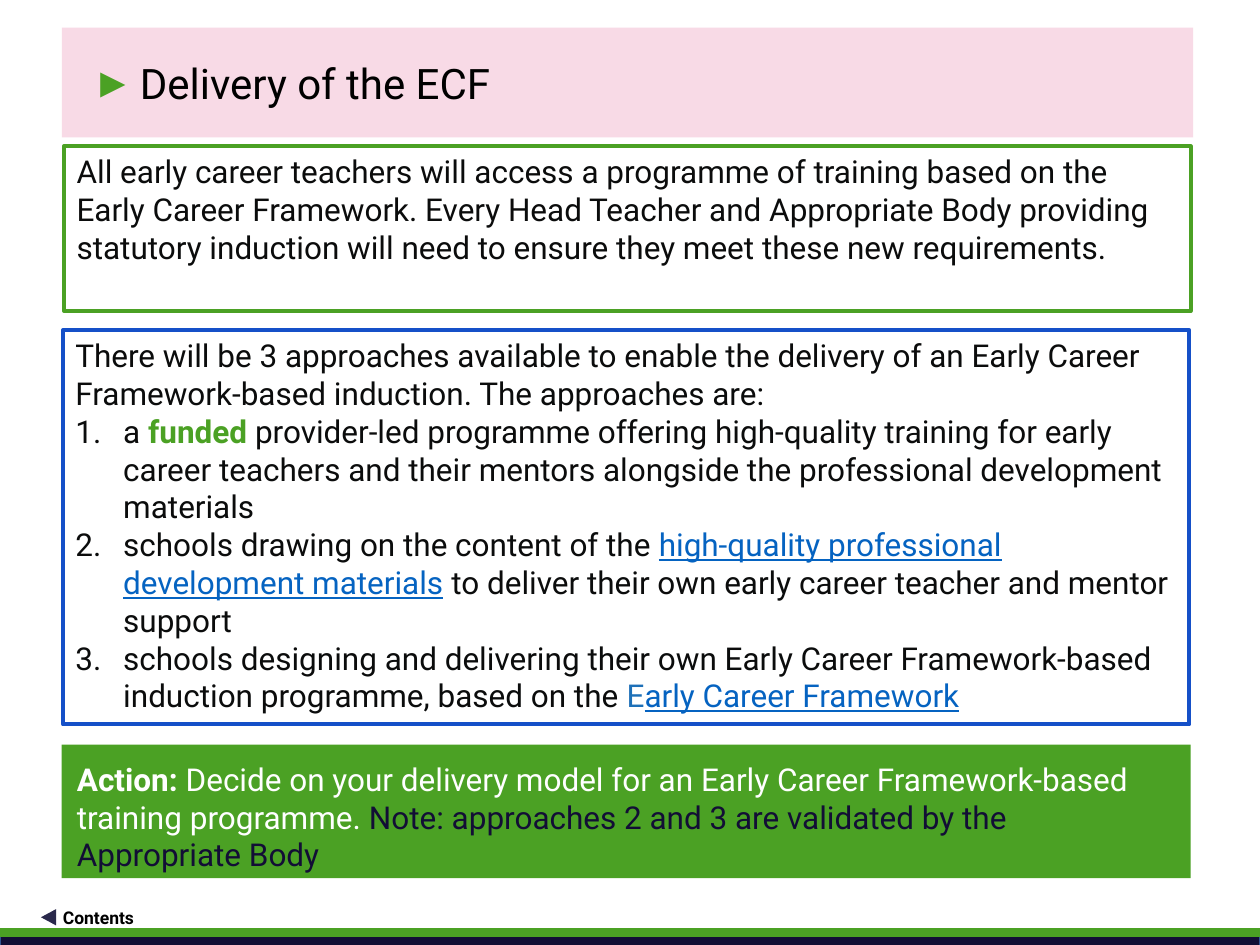
"""Build the slide on delivery of the ECF."""
from lxml.etree import SubElement
from pptx import Presentation
from pptx.dml.color import RGBColor
from pptx.enum.shapes import MSO_SHAPE
from pptx.enum.text import MSO_ANCHOR, PP_ALIGN
from pptx.oxml.ns import qn
from pptx.util import Inches, Pt

GREEN = RGBColor(0x4B, 0xA1, 0x24)
PINK = RGBColor(0xF8, 0xDA, 0xE6)
BLUE = RGBColor(0x15, 0x50, 0xC8)
LINK = RGBColor(0x05, 0x63, 0xC1)
LINK_START = RGBColor(0x1D, 0x70, 0xB8)
NAVY = RGBColor(0x12, 0x0E, 0x35)
ARROW = RGBColor(0x2A, 0x29, 0x4C)
EDGE = RGBColor(0x32, 0x54, 0x91)
INK = RGBColor(0x0B, 0x0C, 0x0C)
BLACK = RGBColor(0, 0, 0)
WHITE = RGBColor(0xFF, 0xFF, 0xFF)

HANGING = 0.38
LINKED = {"color": LINK, "underline": True}

TITLE = [("►", [("Delivery of the ECF", {})])]
INTRO = [(None, [(
    "All early career teachers will access a programme of training based on the "
    "Early Career Framework. Every Head Teacher and Appropriate Body providing "
    "statutory induction will need to ensure they meet these new requirements.", {})])]
APPROACHES = [
    (None, [("There will be 3 approaches available to enable the delivery of an Early "
             "Career Framework-based induction. The approaches are:", {})]),
    ("1.", [("a ", {}),
            ("funded", {"color": GREEN, "bold": True}),
            (" provider-led programme offering high-quality training for early career "
             "teachers and their mentors alongside the professional development "
             "materials", {})]),
    ("1.", [("schools drawing on the content of the ", {}),
            ("high-quality professional development materials", LINKED),
            (" to deliver their own early career teacher and mentor support", {})]),
    ("1.", [("schools designing and delivering their own Early Career Framework-based "
             "induction programme, based on the ", {}),
            ("E", {"color": LINK_START}),
            ("arly Career Framework", LINKED)]),
]
ACTION = [(None, [
    ("Action: ", {"bold": True}),
    ("Decide on your delivery model for an Early Career Framework-based training "
     "programme. ", {}),
    ("Note: approaches 2 and 3 are validated by the Appropriate Body", {"color": NAVY}),
])]
CONTENTS = [(None, [("Contents", {"bold": True})])]


def add_box(slide, place, fill=None, line=None, width=1, kind=MSO_SHAPE.RECTANGLE):
    box = slide.shapes.add_shape(kind, *map(Inches, place))
    box.shadow.inherit = False
    if fill is None:
        box.fill.background()
    else:
        box.fill.solid()
        box.fill.fore_color.rgb = fill
    if line is None:
        box.line.fill.background()
    else:
        box.line.color.rgb = line
        box.line.width = Pt(width)
    return box


def add_bullet(para, bullet):
    properties = para._p.get_or_add_pPr()
    properties.set("marL", str(Inches(HANGING)))
    properties.set("indent", str(-Inches(HANGING)))
    if bullet == "1.":
        SubElement(properties, qn("a:buFont"), typeface="+mj-lt")
        SubElement(properties, qn("a:buAutoNum"), type="arabicPeriod")
    else:
        tint = SubElement(properties, qn("a:buClr"))
        SubElement(tint, qn("a:srgbClr"), val=str(GREEN))
        SubElement(properties, qn("a:buFont"), typeface="Arial")
        SubElement(properties, qn("a:buChar"), char=bullet)


def write(box, content, size=18, color=INK, margins=(0.1, 0.05, 0.1, 0.05),
          align=PP_ALIGN.LEFT):
    frame = box.text_frame
    frame.word_wrap = True
    frame.vertical_anchor = MSO_ANCHOR.TOP
    (frame.margin_left, frame.margin_top,
     frame.margin_right, frame.margin_bottom) = map(Inches, margins)
    for index, (bullet, spans) in enumerate(content):
        para = frame.add_paragraph() if index else frame.paragraphs[0]
        para.alignment = align
        if bullet:
            add_bullet(para, bullet)
        for text, style in spans:
            span = para.add_run()
            span.text = text
            span.font.name = "Roboto"
            span.font.size = Pt(size)
            span.font.bold = style.get("bold", False)
            span.font.underline = style.get("underline", False)
            span.font.color.rgb = style.get("color", color)


def main():
    deck = Presentation()
    deck.slide_width, deck.slide_height = Inches(10), Inches(7.5)
    slide = deck.slides.add_slide(deck.slide_layouts[6])

    intro = add_box(slide, (0.51, 1.16, 8.94, 1.31), line=GREEN, width=2.25)
    write(intro, INTRO)
    title = add_box(slide, (0.49, 0.22, 8.98, 0.87), fill=PINK)
    write(title, TITLE, size=24, color=BLACK, margins=(0.24, 0.24, 0.24, 0.12),
          align=PP_ALIGN.JUSTIFY)
    approaches = add_box(slide, (0.5, 2.62, 8.94, 3.13), line=BLUE, width=2.25)
    write(approaches, APPROACHES)

    arrow = add_box(slide, (0.32, 7.22, 0.13, 0.12), fill=ARROW,
                    kind=MSO_SHAPE.ISOSCELES_TRIANGLE)
    arrow.rotation = 270
    contents = slide.shapes.add_textbox(*map(Inches, (0.5, 7.2, 0.84, 0.17)))
    write(contents, CONTENTS, size=10, color=BLACK, margins=(0, 0, 0, 0))
    add_box(slide, (0, 7.38, 10, 0.18), fill=NAVY, line=EDGE)
    add_box(slide, (0, 7.37, 10, 0.06), fill=GREEN, line=GREEN)

    action = add_box(slide, (0.49, 5.91, 8.96, 1.06), fill=GREEN)
    write(action, ACTION, color=WHITE, margins=(0.12,) * 4)
    deck.save("out.pptx")


if __name__ == "__main__":
    main()
